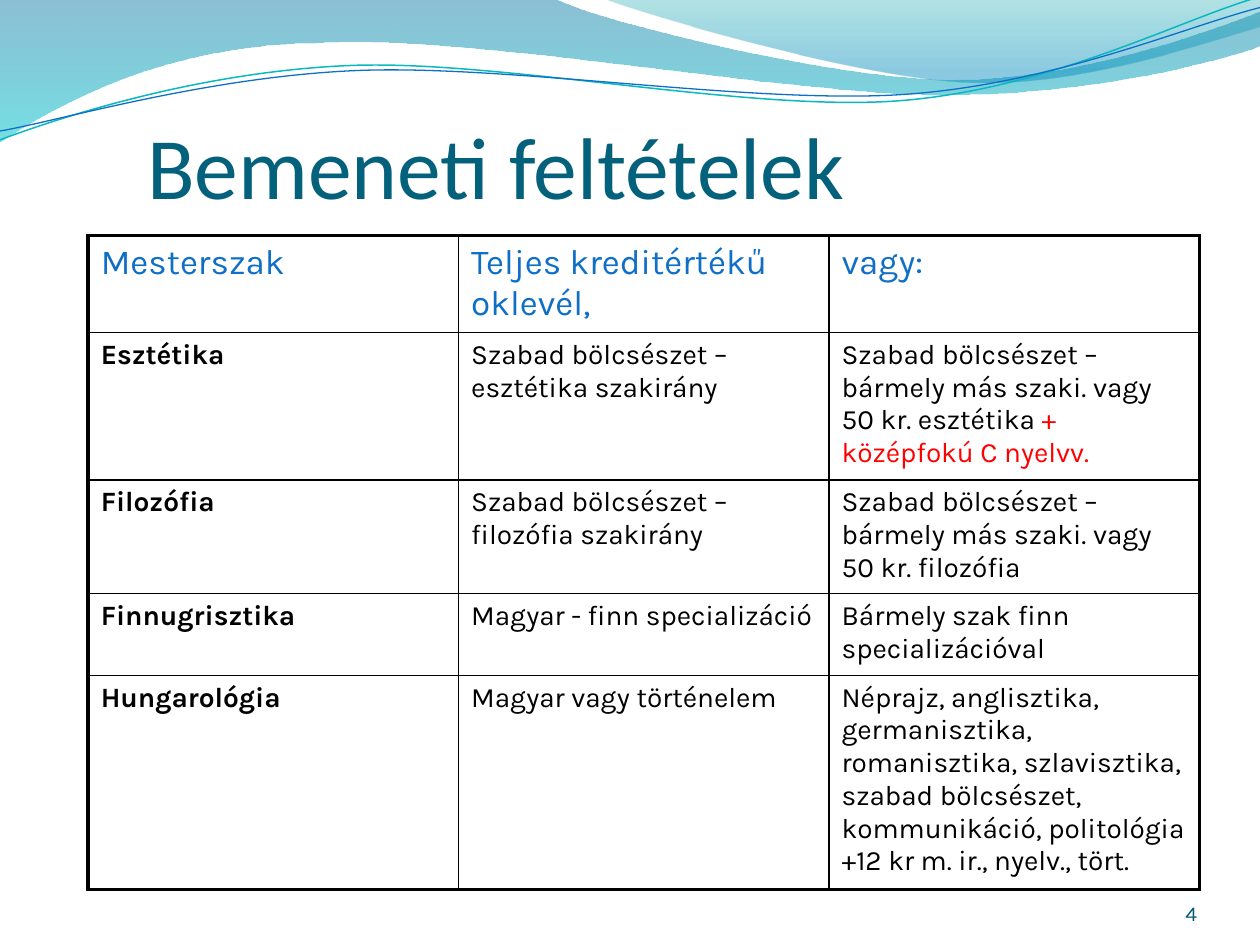
import math

import pptx
import pptx.util
import pptx.dml.color
import pptx.enum.text
import pptx.oxml
import pptx.oxml.ns
from pptx.util import Inches

TILT = 357.3
TILT_CENTER = (4.99, 0.58)
LEFT_WAVE = [
    [(0, -0.01)], [(4.4, -0.01)],
    [(4.76, 0.17), (6.64, 0.63), (7.58, 0.63)],
    [(8.53, 0.63), (9.58, 0.26), (10, 0.09)],
    [(10.01, 0.36)],
    [(9.83, 0.44), (8.7, 0.76), (7.46, 0.75)],
    [(6.22, 0.75), (3.82, 0.28), (2.57, 0.34)],
    [(1.29, 0.35), (0.46, 0.83), (-0.01, 1.13)],
]
RIGHT_WAVE = [
    [(4.79, -0.01)],
    [(5.09, 0.11), (6.82, 0.62), (7.69, 0.65)],
    [(8.56, 0.69), (9.61, 0.32), (10, 0.21)],
    [(10, 0)],
]
TEAL_LINE = [
    [(0, 1.11)],
    [(0.48, 0.93), (1.58, 0.57), (2.77, 0.52)],
    [(3.95, 0.47), (5.93, 0.89), (7.13, 0.8)],
    [(8.33, 0.71), (9.38, 0.15), (9.98, -0.02)],
]
BLUE_LINE = [
    [(0, 1.04)],
    [(0.47, 0.96), (1.64, 0.61), (2.83, 0.56)],
    [(4.03, 0.51), (5.97, 0.83), (7.17, 0.75)],
    [(8.36, 0.67), (9.41, 0.21), (10, 0.06)],
]
HEADER = ["Mesterszak", "Teljes kreditértékű oklevél,", "vagy:"]
PROGRAMMES = [
    ["Esztétika", "Szabad bölcsészet – esztétika szakirány",
     "Szabad bölcsészet – bármely más szaki. vagy 50 kr. esztétika "],
    ["Filozófia", "Szabad bölcsészet – filozófia szakirány",
     "Szabad bölcsészet – bármely más szaki. vagy 50 kr. filozófia"],
    ["Finnugrisztika", "Magyar - finn specializáció",
     "Bármely szak finn specializációval"],
    ["Hungarológia", "Magyar vagy történelem",
     "Néprajz, anglisztika, germanisztika, romanisztika, szlavisztika, "
     "szabad bölcsészet, kommunikáció, politológia +12 kr m. ir., nyelv., tört."],
]
EXTRA_CONDITION = "+ középfokú C nyelvv."
ROW_HEIGHTS = [0.77, 1.17, 0.9, 0.65, 1.7]


def rgb(value):
    return pptx.dml.color.RGBColor.from_string(value)


def set_all(obj, values):
    for name, value in values.items():
        setattr(obj, name, value)


def add_run(p, text, size, color, font="Karla", bold=False):
    r = p.add_run()
    r.text = text
    set_all(r.font, {"name": font, "size": pptx.util.Pt(size), "bold": bold})
    r.font.color.rgb = rgb(color)


def level(point):
    angle = math.radians(360 - TILT)
    cx, cy = TILT_CENTER
    dx, dy = point[0] - cx, point[1] - cy
    return (cx + dx * math.cos(angle) - dy * math.sin(angle),
            cy + dx * math.sin(angle) + dy * math.cos(angle))


def curve_segments(sp, segments):
    qn = pptx.oxml.ns.qn
    lines = iter(list(sp.element.iter(qn("a:lnTo"))))
    for segment in segments[1:]:
        nodes = [next(lines) for _ in segment]
        if len(nodes) == 3:
            curve = pptx.oxml.parse_xml(f'<a:cubicBezTo {pptx.oxml.ns.nsdecls("a")}/>')
            nodes[0].addprevious(curve)
            for node in nodes:
                curve.append(node.find(qn("a:pt")))
                node.getparent().remove(node)


def add_outline(s, left, top, segments, close):
    start, *rest = [(left + Inches(x), top + Inches(y))
                    for segment in segments for x, y in segment]
    builder = s.shapes.build_freeform(*start, scale=1.0)
    builder.add_line_segments(rest, close=close)
    sp = builder.convert_to_shape()
    sp.shadow.inherit = False
    curve_segments(sp, segments)
    return sp


def add_wave(s, left, top, segments, stops):
    sp = add_outline(s, left, top, segments, True)
    sp.line.fill.background()
    sp.fill.gradient()
    sp.fill.gradient_angle = 270
    for stop, (position, color, opacity) in zip(sp.fill.gradient_stops, stops):
        stop.position = position
        stop.color.rgb = rgb(color)
    colors = sp.element.spPr.iter(pptx.oxml.ns.qn("a:srgbClr"))
    for node, (position, color, opacity) in zip(colors, stops):
        alpha = pptx.oxml.parse_xml(
            f'<a:alpha {pptx.oxml.ns.nsdecls("a")} val="{opacity * 1000}"/>')
        node.append(alpha)


def add_curve(s, left, top, segments, color, width):
    flat = [[level(point) for point in segment] for segment in segments]
    sp = add_outline(s, left, top, flat, False)
    sp.rotation = TILT
    sp.fill.background()
    sp.line.color.rgb = rgb(color)
    sp.line.width = pptx.util.Pt(width)


def add_header_waves(s, left, top):
    add_wave(s, left, top, LEFT_WAVE, [(0, "0074A1", 45), (1, "00C6CF", 55)])
    add_wave(s, left, top, RIGHT_WAVE, [(0, "00A1A9", 30), (0.8, "008BBF", 45)])
    add_curve(s, left, top, TEAL_LINE, "0AB8BF", 0.85)
    add_curve(s, left, top, BLUE_LINE, "0F6FC6", 0.75)


def add_text(s, left, top, width, height, text, align, margin_top, **style):
    tf = s.shapes.add_textbox(left, top, width, height).text_frame
    set_all(tf, {"word_wrap": True, "margin_left": 0, "margin_right": 0,
                 "margin_top": margin_top, "margin_bottom": 0,
                 "vertical_anchor": pptx.enum.text.MSO_ANCHOR.BOTTOM})
    p = tf.paragraphs[0]
    p.alignment = align
    add_run(p, text, **style)


def set_borders(cell, widths):
    tc_pr = cell._tc.get_or_add_tcPr()
    for side, width in widths.items():
        tc_pr.append(pptx.oxml.parse_xml(
            f'<a:ln{side} {pptx.oxml.ns.nsdecls("a")} w="{pptx.util.Pt(width)}">'
            '<a:solidFill><a:srgbClr val="000000"/></a:solidFill>'
            f'</a:ln{side}>'))


def add_requirements(s, left, top, width, height):
    rows = [HEADER] + PROGRAMMES
    last_row, last_col = len(rows) - 1, len(HEADER) - 1
    table = s.shapes.add_table(len(rows), len(HEADER), left, top, width, height).table
    set_all(table, {"first_row": False, "horz_banding": False})
    for row, row_height in zip(table.rows, ROW_HEIGHTS):
        row.height = Inches(row_height)
    for i, texts in enumerate(rows):
        for j, text in enumerate(texts):
            cell = table.cell(i, j)
            edges = {"L": j == 0, "R": j == last_col, "T": i == 0, "B": i == last_row}
            set_borders(cell, {side: 2.25 if outer else 1 for side, outer in edges.items()})
            cell.fill.background()
            p = cell.text_frame.paragraphs[0]
            if i == 0:
                add_run(p, text, 20, "0F6FC6")
            else:
                add_run(p, text, 16, "000000", bold=j == 0)
    add_run(table.cell(1, last_col).text_frame.paragraphs[0], EXTRA_CONDITION, 16, "FF0000")


def main():
    prs = pptx.Presentation()
    set_all(prs, {"slide_width": Inches(10), "slide_height": Inches(7.5)})
    s = prs.slides.add_slide(prs.slide_layouts[6])
    align = pptx.enum.text.PP_ALIGN
    add_header_waves(s, Inches(0), Inches(0))
    add_text(s, Inches(1.17), Inches(0.33), Inches(8.25), Inches(1.39),
             "Bemeneti feltételek", align.LEFT, Inches(0.05),
             size=50, color="04617B", font="Calibri")
    add_requirements(s, Inches(0.7), Inches(1.87), Inches(8.82), Inches(5.19))
    add_text(s, Inches(8.67), Inches(6.95), Inches(0.83), Inches(0.4),
             "4", align.RIGHT, 0, size=12, color="045C75")
    prs.save("out.pptx")


if __name__ == "__main__":
    main()
